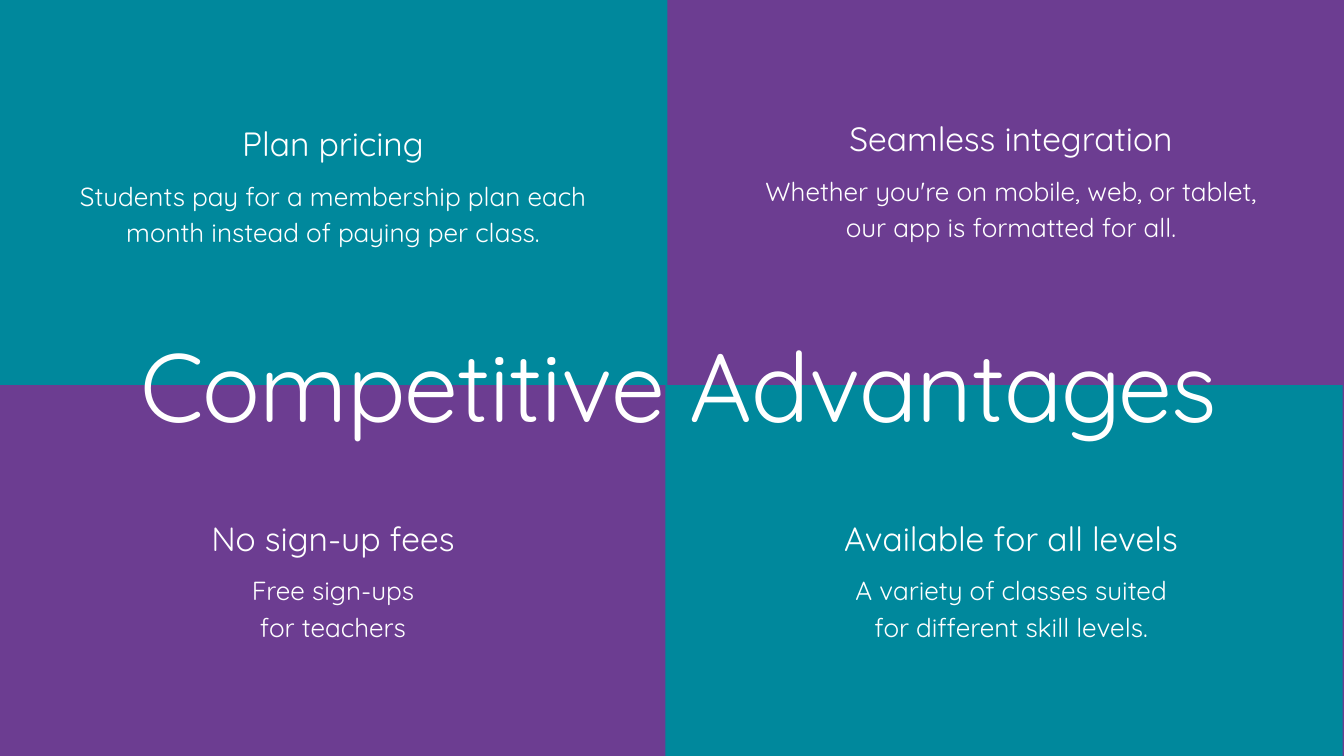
import pptx
import pptx.dml.color
import pptx.enum.shapes
import pptx.enum.text
import pptx.util

PX = 9144
COLOURS = {"purple": "6C3D91", "teal": "00889C", "white": "FFFFFF"}
FONT = "Quicksand"


def colour(name):
    """Return the named colour."""
    return pptx.dml.color.RGBColor.from_string(COLOURS[name])


def to_emu(box):
    """Turn a box in px into EMU lengths."""
    return [pptx.util.Emu(length * PX) for length in box]


def add_text(shapes, box, text, size, leading, spacing=None):
    """Place centred white text, one paragraph for each line of the string."""
    frame = shapes.add_textbox(*to_emu(box)).text_frame
    frame.word_wrap = True
    frame.auto_size = pptx.enum.text.MSO_AUTO_SIZE.SHAPE_TO_FIT_TEXT
    frame.margin_left = frame.margin_top = frame.margin_right = frame.margin_bottom = 0
    frame.text = text
    for para in frame.paragraphs:
        para.alignment = pptx.enum.text.PP_ALIGN.CENTER
        para.line_spacing = pptx.util.Pt(leading)
        for span in para.runs:
            span.font.name = FONT
            span.font.size = pptx.util.Pt(size)
            span.font.color.rgb = colour("white")
            if spacing is not None:
                span._r.get_or_add_rPr().set("spc", str(spacing))


def add_panel(page, box):
    """Fill one quadrant with teal."""
    panel = page.shapes.add_shape(pptx.enum.shapes.MSO_SHAPE.RECTANGLE, *to_emu(box))
    panel.shadow.inherit = False
    panel.fill.solid()
    panel.fill.fore_color.rgb = colour("teal")
    panel.line.fill.background()


def add_advantage(page, box, heading, body):
    """Group a heading with the body text below it."""
    left, top, width, height = box
    shapes = page.shapes.add_group_shape().shapes
    body_top = 87
    add_text(shapes, (left, top + body_top, width, height - body_top), body, 28, 39.2)
    add_text(shapes, (left, top, width, 65), heading, 36, 50.4)


def add_title(page, box):
    """Place the large title across the middle."""
    add_text(page.shapes, box, "Competitive Advantages", 103.9, 114.3, spacing=-100)


def main():
    """Build and save the deck."""
    deck = pptx.Presentation()
    deck.slide_width, deck.slide_height = to_emu((2000, 1125))
    page = deck.slides.add_slide(deck.slide_layouts[6])
    page.background.fill.solid()
    page.background.fill.fore_color.rgb = colour("purple")

    add_panel(page, (-2, 0, 995, 573))
    add_panel(page, (990, 573, 1008, 552))

    left, right = 112, 1121
    advantages = [
        (left, 760, "No sign-up fees", "Free sign-ups\nfor teachers"),
        (left, 173, "Plan pricing",
         "Students pay for a membership plan each month instead of paying per class."),
        (right, 166, "Seamless integration",
         "Whether you're on mobile, web, or tablet, our app is formatted for all."),
        (right, 760, "Available for all levels",
         "A variety of classes suited\nfor different skill levels."),
    ]
    for column, top, heading, body in advantages:
        add_advantage(page, (column, top, 767, 192), heading, body)

    add_title(page, (158, 499, 1704, 164))
    deck.save("out.pptx")


if __name__ == "__main__":
    main()
